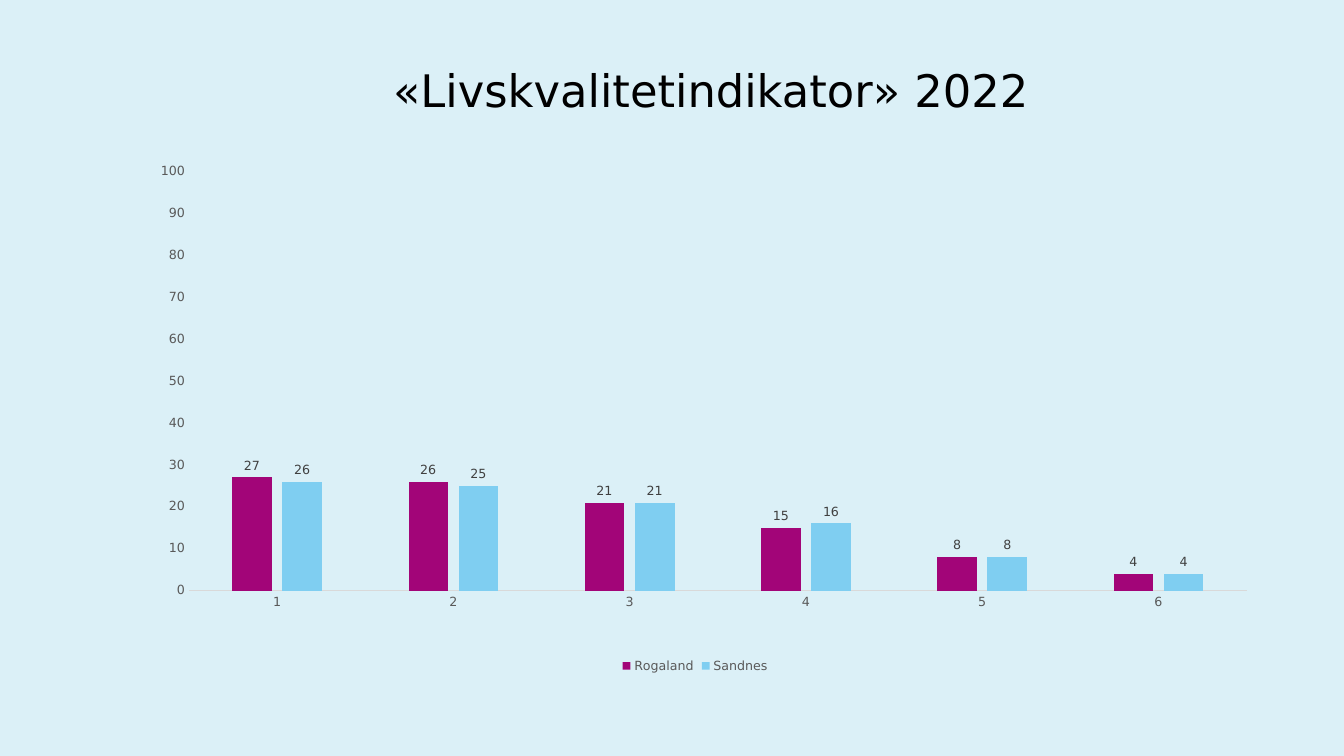
from lxml import etree
from pptx import Presentation
from pptx import util as u
from pptx.chart.data import CategoryChartData
from pptx.dml.color import RGBColor
from pptx.enum import chart as charts, text
from pptx.oxml.ns import qn

TITLE = "«Livskvalitetindikator» 2022"
CATEGORIES = ["1", "2", "3", "4", "5", "6"]
SERIES = {
    "Rogaland": [27, 26, 21, 15, 8, 4],
    "Sandnes": [26, 25, 21, 16, 8, 4],
}
COLOURS = {
    "background": "DBF0F7",
    "title": "000000",
    "axis text": "595959",
    "axis line": "D9D9D9",
    "label": "404040",
    "Rogaland": "A20578",
    "Sandnes": "7FCEF1",
}
FONT = "DejaVu Sans"
TITLE_BOX = (3.8, 0.57, 6.6, 0.64)
CHART_BOX = (1.15, 1.54, 11.49, 5.18)
PLOT_AREA = {
    "layoutTarget": "inner", "xMode": "edge", "yMode": "edge",
    "x": 0.063, "y": 0.031, "w": 0.913, "h": 0.803,
}


def colour(name):
    return RGBColor.from_string(COLOURS[name])


def paint(fill, name):
    fill.solid()
    fill.fore_color.rgb = colour(name)


def style_font(font, size, name):
    font.name = FONT
    font.size = u.Pt(size)
    font.color.rgb = colour(name)


def add_title(page):
    box = page.shapes.add_textbox(*map(u.Inches, TITLE_BOX))
    box.text_frame.word_wrap = False
    box.text_frame.auto_size = text.MSO_AUTO_SIZE.SHAPE_TO_FIT_TEXT
    span = box.text_frame.paragraphs[0].add_run()
    span.text = TITLE
    style_font(span.font, 32, "title")


def place_plot(chart):
    area = chart.element.find(".//" + qn("c:plotArea"))
    for old in area.findall(qn("c:layout")):
        area.remove(old)
    layout = etree.Element(qn("c:layout"))
    manual = etree.SubElement(layout, qn("c:manualLayout"))
    for tag, value in PLOT_AREA.items():
        etree.SubElement(manual, qn("c:" + tag)).set("val", str(value))
    area.insert(0, layout)


def style_axes(chart):
    for axis in (chart.category_axis, chart.value_axis):
        axis.has_major_gridlines = False
        axis.major_tick_mark = charts.XL_TICK_MARK.NONE
        axis.minor_tick_mark = charts.XL_TICK_MARK.NONE
        style_font(axis.tick_labels.font, 9, "axis text")
    line = chart.category_axis.format.line
    paint(line.fill, "axis line")
    line.width = u.Pt(0.75)
    chart.value_axis.format.line.fill.background()
    chart.value_axis.minimum_scale = 0
    chart.value_axis.maximum_scale = 100
    chart.value_axis.major_unit = 10


def style_series(plot):
    plot.gap_width = 219
    plot.overlap = -27
    plot.vary_by_categories = False
    for series in plot.series:
        paint(series.format.fill, series.name)
        labels = series.data_labels
        labels.show_value = True
        labels.position = charts.XL_LABEL_POSITION.OUTSIDE_END
        style_font(labels.font, 9, "label")


def add_indicator_chart(page):
    data = CategoryChartData(number_format="0")
    data.categories = CATEGORIES
    for name, values in SERIES.items():
        data.add_series(name, values)
    kind = charts.XL_CHART_TYPE.COLUMN_CLUSTERED
    chart = page.shapes.add_chart(kind, *map(u.Inches, CHART_BOX), data).chart
    chart.has_title = False
    style_font(chart.font, 10, "title")
    chart.has_legend = True
    chart.legend.position = charts.XL_LEGEND_POSITION.BOTTOM
    chart.legend.include_in_layout = False
    style_font(chart.legend.font, 9, "axis text")
    style_axes(chart)
    style_series(chart.plots[0])
    place_plot(chart)


def main():
    """Build the quality-of-life indicator slide."""
    deck = Presentation()
    deck.slide_width = u.Inches(13.33)
    deck.slide_height = u.Inches(7.5)
    page = deck.slides.add_slide(deck.slide_layouts[6])
    paint(page.background.fill, "background")
    add_title(page)
    add_indicator_chart(page)
    deck.save("out.pptx")


if __name__ == "__main__":
    main()
